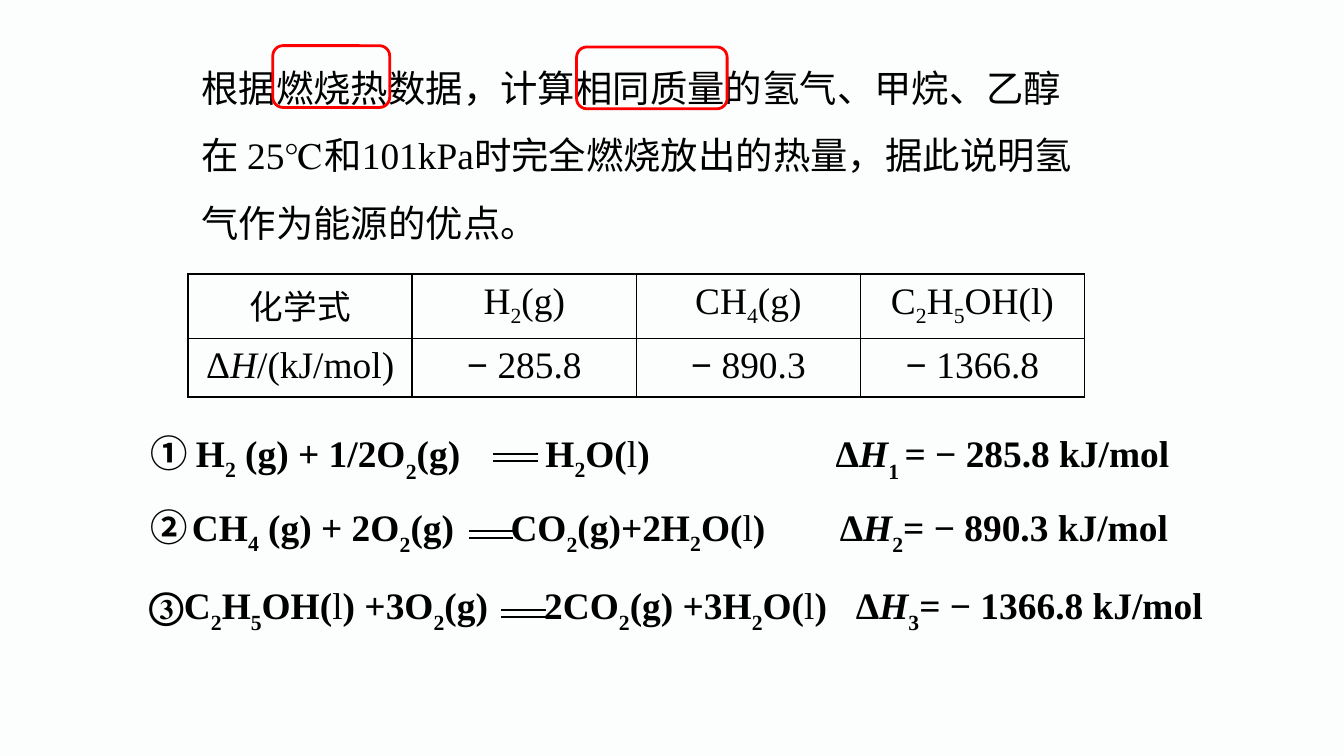
import pptx
import pptx.util
import pptx.dml.color
import pptx.enum.shapes
import pptx.enum.text
import pptx.oxml.ns
from lxml import etree

SERIF, SANS = "Times New Roman", "Noto Sans CJK SC"
BLACK, RED, PAPER = "000000", "FF0000", "FCFDFD"
qn = pptx.oxml.ns.qn


def color(value):
    return pptx.dml.color.RGBColor.from_string(value)


class Board:
    """Slide on a square grid of 100 columns, each 0.1 inch."""

    # Toggles in formulas: two subscript depths, italic, bold
    subscripts = {"~": -25, "_": -30}

    def __init__(self, presentation):
        self.slide = presentation.slides.add_slide(presentation.slide_layouts[6])
        self.slide.background.fill.solid()
        self.slide.background.fill.fore_color.rgb = color(PAPER)

    def units(self, *values):
        return [pptx.util.Inches(value / 10) for value in values]

    def style(self, font, name=SERIF, size=20, bold=False):
        font.name, font.size, font.bold = name, pptx.util.Pt(size), bold
        font.color.rgb = color(BLACK)

    def run(self, paragraph, text, bold, italic, baseline):
        run = paragraph.add_run()
        run.text = text
        if bold is not None:
            run.font.bold = bold
        if italic:
            run.font.italic = True
        if baseline:
            run._r.get_or_add_rPr().set("baseline", str(baseline * 1000))

    def formula(self, paragraph, text, bold=False):
        """Write text, switching run formats at the toggle characters."""
        piece, flipped, italic, baseline = "", False, False, 0
        for character in text + "*":
            if character not in "~_*^":
                piece += character
                continue
            if piece:
                self.run(paragraph, piece, not bold if flipped else None, italic, baseline)
                piece = ""
            if character == "*":
                italic = not italic
            elif character == "^":
                flipped = not flipped
            else:
                baseline = 0 if baseline else self.subscripts[character]

    def text_box(self, shapes, box, anchor):
        frame = shapes.add_textbox(*self.units(*box)).text_frame
        frame.word_wrap = True
        frame.auto_size = pptx.enum.text.MSO_AUTO_SIZE.SHAPE_TO_FIT_TEXT
        frame.vertical_anchor = anchor
        return frame

    def passage(self, box, lines):
        frame = self.text_box(self.slide.shapes, box, pptx.enum.text.MSO_ANCHOR.TOP)
        for index, line in enumerate(lines):
            paragraph = frame.add_paragraph() if index else frame.paragraphs[0]
            paragraph.line_spacing = 1.5
            self.style(paragraph.font)
            self.formula(paragraph, line)

    def table(self, box, rows, row_height):
        table = self.slide.shapes.add_table(len(rows), len(rows[0]), *self.units(*box)).table
        table.first_row = table.horz_banding = False
        for row_index, row in enumerate(rows):
            table.rows[row_index].height = self.units(row_height)[0]
            for column_index, text in enumerate(row):
                cell = table.cell(row_index, column_index)
                cell.fill.background()
                self.borders(cell)
                paragraph = cell.text_frame.paragraphs[0]
                paragraph.alignment = pptx.enum.text.PP_ALIGN.CENTER
                heading = row_index == column_index == 0
                self.style(paragraph.font, SANS if heading else SERIF, 18 if heading else 20)
                self.formula(paragraph, text)

    def borders(self, cell):
        properties = cell._tc.get_or_add_tcPr()
        for index, side in enumerate(("lnL", "lnR", "lnT", "lnB")):
            line = etree.Element(qn("a:" + side), w=str(pptx.util.Pt(1)))
            fill = etree.SubElement(line, qn("a:solidFill"))
            etree.SubElement(fill, qn("a:srgbClr"), val=BLACK)
            properties.insert(index, line)

    def equation(self, box, marker, text, stops, sign):
        group = self.slide.shapes.add_group_shape()
        frame = self.text_box(group.shapes, box, pptx.enum.text.MSO_ANCHOR.MIDDLE)
        paragraph = frame.paragraphs[0]
        tabs = etree.SubElement(paragraph._p.get_or_add_pPr(), qn("a:tabLst"))
        for stop in self.units(*stops):
            etree.SubElement(tabs, qn("a:tab"), pos=str(stop), algn="l")
        self.style(paragraph.font, bold=True)
        if marker:
            run = paragraph.add_run()
            run.text = marker
            run.font.name = SANS
        self.formula(paragraph, text, bold=True)
        # Double line standing for the equals sign
        left, top = sign
        for height in (top, top + 0.5):
            self.line(group.shapes, left, left + 3.3, height)

    def line(self, shapes, left, right, height):
        connector = shapes.add_connector(
            pptx.enum.shapes.MSO_CONNECTOR.STRAIGHT, *self.units(left, height, right, height))
        connector.line.color.rgb = color(BLACK)
        connector.line.width = pptx.util.Pt(1)
        etree.SubElement(connector._element.spPr, qn("a:effectLst"))

    def highlight(self, box):
        shape = self.slide.shapes.add_shape(
            pptx.enum.shapes.MSO_SHAPE.ROUNDED_RECTANGLE, *self.units(*box))
        shape.shadow.inherit = False
        shape.fill.background()
        shape.line.color.rgb = color(RED)
        shape.line.width = pptx.util.Pt(1.5)


def main():
    presentation = pptx.Presentation()
    presentation.slide_width = pptx.util.Inches(10)
    presentation.slide_height = presentation.slide_width * 9 // 16
    board = Board(presentation)

    # Problem statement
    board.passage((14, 2.7, 70, 16.2), [
        "根据燃烧热数据，计算相同质量的氢气、甲烷、乙醇",
        "在 25℃和101kPa时完全燃烧放出的热量，据此说明氢",
        "气作为能源的优点。",
    ])

    # Heats of combustion
    board.table((14, 20.4, 66.7, 8.2), [
        ["化学式", "H~2~(g)", "CH~4~(g)", "C~2~H~5~OH(l)"],
        ["Δ*H*/(kJ/mol)", "^− ^285.8", "^− ^890.3", "^− ^1366.8"],
    ], row_height=4.1)

    # Equations: box, marker, text, tab stops, equals sign
    for equation in [
        ((10.2, 31.8, 82, 4.4), "①",
         "\tH~2~ (g) + 1/2O_2_(g)\tH~2~O(^l^)\tΔ*H*_1 _= − 285.8 kJ/mol",
         (3.4, 29.4, 51), (36.7, 33.8)),
        ((10.2, 37.3, 82.9, 4.4), "②",
         "\tCH~4~ (g) + 2O_2_(g)\tCO_2_(g)+2H~2~O(^l^)\tΔ*H*_2_= − 890.3 kJ/mol",
         (3.1, 26.8, 51.3), (34.9, 39.5)),
        ((10.1, 43.1, 89.2, 4.4), "",
         "③C_2_H_5_OH(^l^) +3O_2_(g)\t2CO_2_(g) +3H_2_O(^l^)\tΔ*H*_3_= − 1366.8 kJ/mol",
         (29.4, 52.6), (37.3, 45.4)),
    ]:
        board.equation(*equation)

    # Key words
    board.highlight((42.9, 3.5, 11.2, 4.6))
    board.highlight((20.3, 3.4, 8.7, 4.6))

    presentation.save("out.pptx")


if __name__ == "__main__":
    main()
